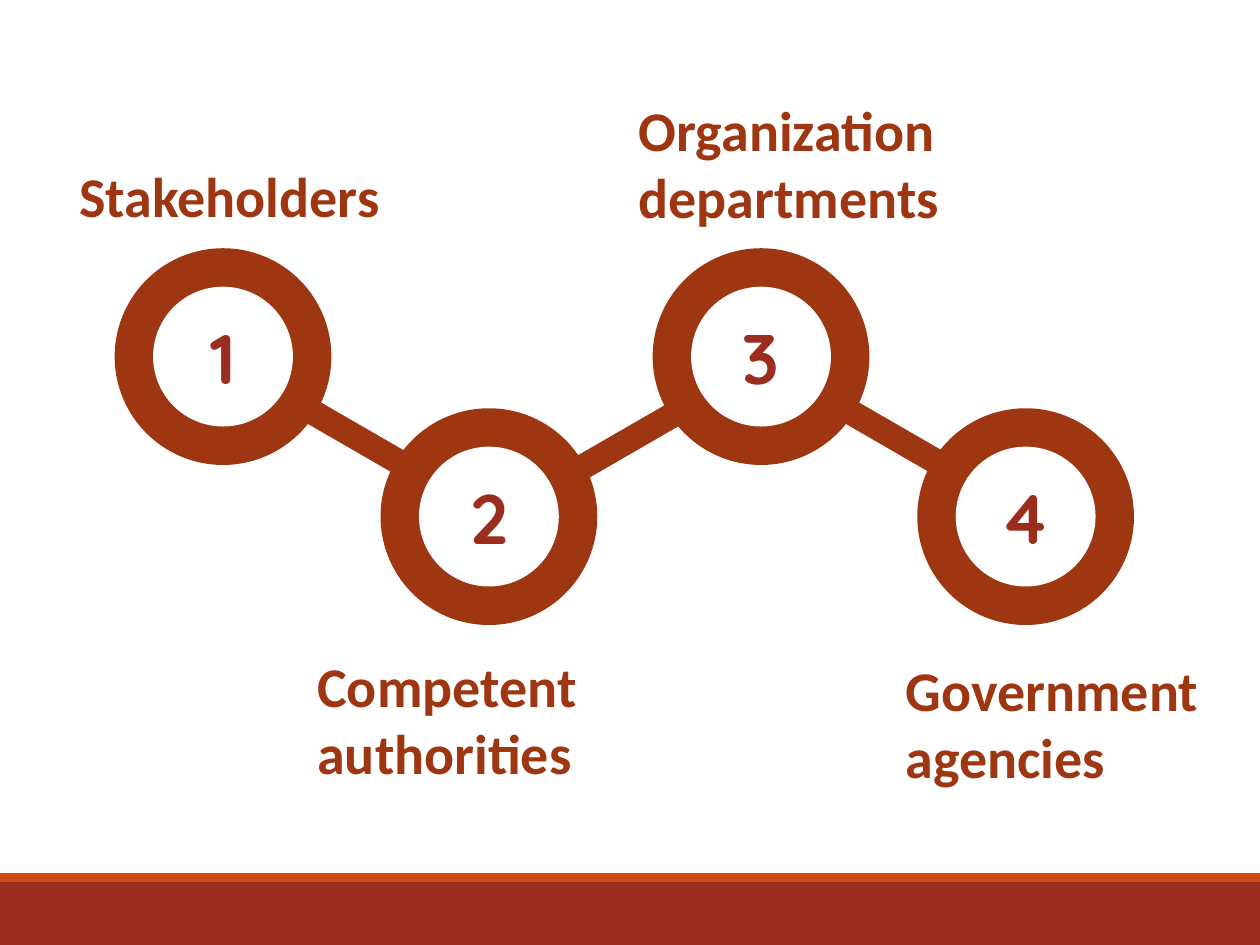
from dataclasses import dataclass

from pptx import Presentation
from pptx.dml.color import RGBColor
from pptx.enum.shapes import MSO_SHAPE
from pptx.enum.text import MSO_ANCHOR, MSO_AUTO_SIZE, PP_ALIGN
from pptx.util import Inches, Pt


@dataclass(frozen=True)
class Theme:
    rust: RGBColor = RGBColor(0x9E, 0x36, 0x11)
    brick: RGBColor = RGBColor(0x9B, 0x2D, 0x1F)
    orange: RGBColor = RGBColor(0xD3, 0x48, 0x17)
    white: RGBColor = RGBColor(0xFF, 0xFF, 0xFF)
    number_font: str = "Quicksand"
    label_font: str = "Calibri"
    number_size: int = 40
    label_size: int = 32


THEME = Theme()
RING_SIZE = 1.72
DISC_SIZE = 1.11
LINK_WIDTH, LINK_HEIGHT = 1.03, 0.2
LINK_TOP = 3.37
HIGH, LOW = 1.97, 3.24

STAGES = [
    (0.91, HIGH, ["Stakeholders"], (0.53, 1.23, 2.61, 0.64)),
    (3.02, LOW, ["Competent", "authorities"], (2.42, 5.12, 2.28, 1.18)),
    (5.18, HIGH, ["Organization", "departments"], (4.97, 0.71, 2.61, 1.18)),
    (7.28, LOW, ["Government", "agencies"], (7.09, 5.15, 2.54, 1.18)),
]
LINKS = [(2.31, 30), (4.52, -30), (6.58, 30)]


def add_filled(shapes, preset, box, color):
    shape = shapes.add_shape(preset, *map(Inches, box))
    shape.shadow.inherit = False
    shape.fill.solid()
    shape.fill.fore_color.rgb = color
    shape.line.fill.background()
    return shape


def add_bold_run(paragraph, text, font_name, size, color):
    run = paragraph.add_run()
    run.text = text
    run.font.name = font_name
    run.font.size = Pt(size)
    run.font.bold = True
    run.font.color.rgb = color


def add_numbered_ring(slide, number, left, top):
    ring_group = slide.shapes.add_group_shape().shapes
    add_filled(ring_group, MSO_SHAPE.OVAL,
               (left, top, RING_SIZE, RING_SIZE), THEME.rust)
    inset = (RING_SIZE - DISC_SIZE) / 2
    disc = add_filled(ring_group, MSO_SHAPE.OVAL,
                      (left + inset, top + inset, DISC_SIZE, DISC_SIZE), THEME.white)
    frame = disc.text_frame
    frame.vertical_anchor = MSO_ANCHOR.MIDDLE
    paragraph = frame.paragraphs[0]
    paragraph.alignment = PP_ALIGN.CENTER
    add_bold_run(paragraph, str(number), THEME.number_font,
                 THEME.number_size, THEME.brick)


def add_link(slide, left, angle):
    link = add_filled(slide.shapes, MSO_SHAPE.RECTANGLE,
                      (left, LINK_TOP, LINK_WIDTH, LINK_HEIGHT), THEME.rust)
    link.rotation = angle


def add_label(slide, lines, box):
    frame = slide.shapes.add_textbox(*map(Inches, box)).text_frame
    frame.word_wrap = False
    frame.auto_size = MSO_AUTO_SIZE.SHAPE_TO_FIT_TEXT
    for index, line in enumerate(lines):
        paragraph = frame.add_paragraph() if index else frame.paragraphs[0]
        add_bold_run(paragraph, line, THEME.label_font,
                     THEME.label_size, THEME.rust)


def add_footer(slide):
    for top, height, color in [(7, 0.5, THEME.brick), (6.93, 0.07, THEME.orange)]:
        add_filled(slide.shapes, MSO_SHAPE.RECTANGLE, (0, top, 10, height), color)


def main():
    presentation = Presentation()
    presentation.slide_width = Inches(10)
    presentation.slide_height = Inches(7.5)
    slide = presentation.slides.add_slide(presentation.slide_layouts[6])

    add_footer(slide)
    for index, (left, top, _, _) in enumerate(STAGES):
        add_numbered_ring(slide, index + 1, left, top)
        if index < len(LINKS):
            add_link(slide, *LINKS[index])
    for _, _, lines, label_box in STAGES:
        add_label(slide, lines, label_box)

    presentation.save("out.pptx")


if __name__ == "__main__":
    main()
